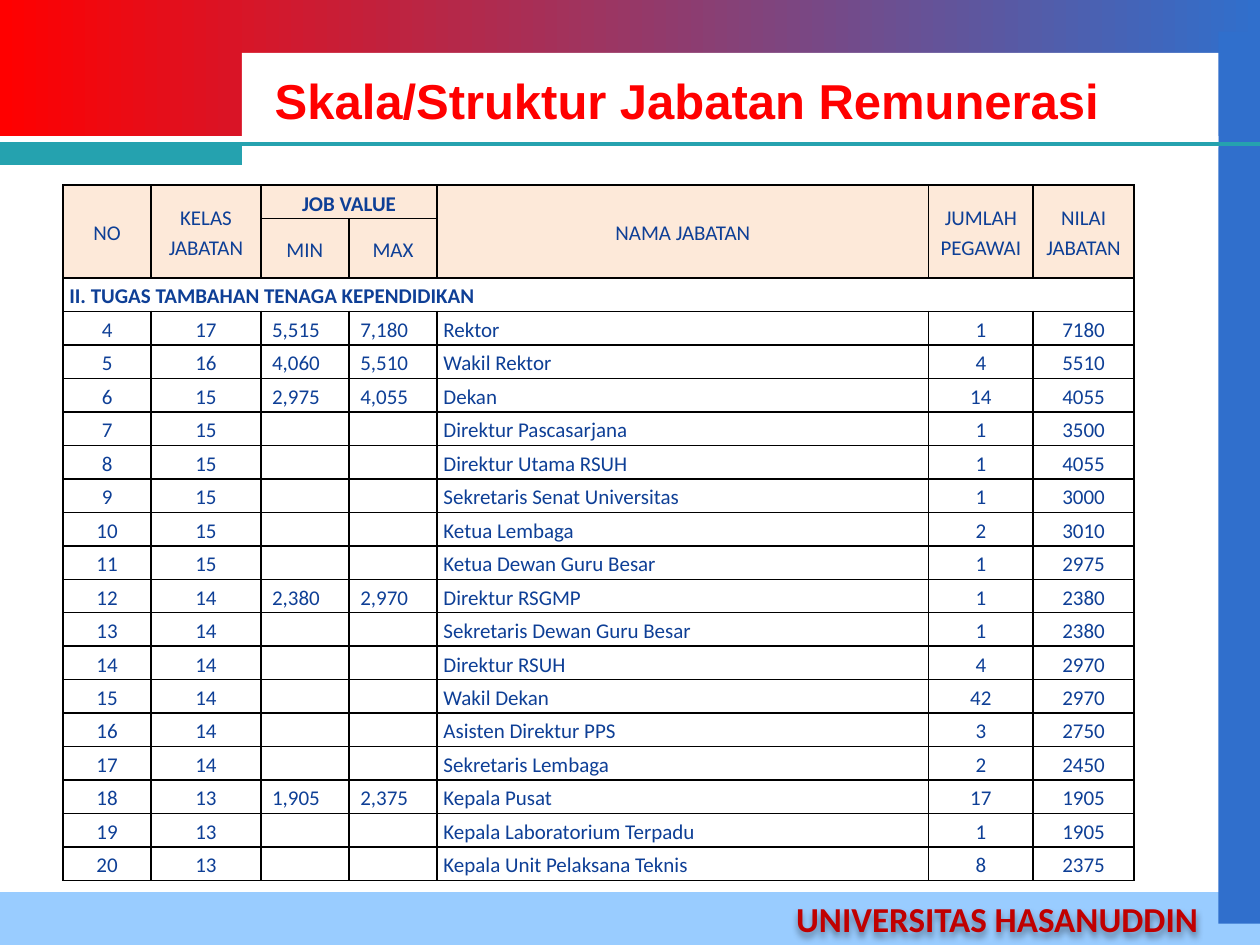
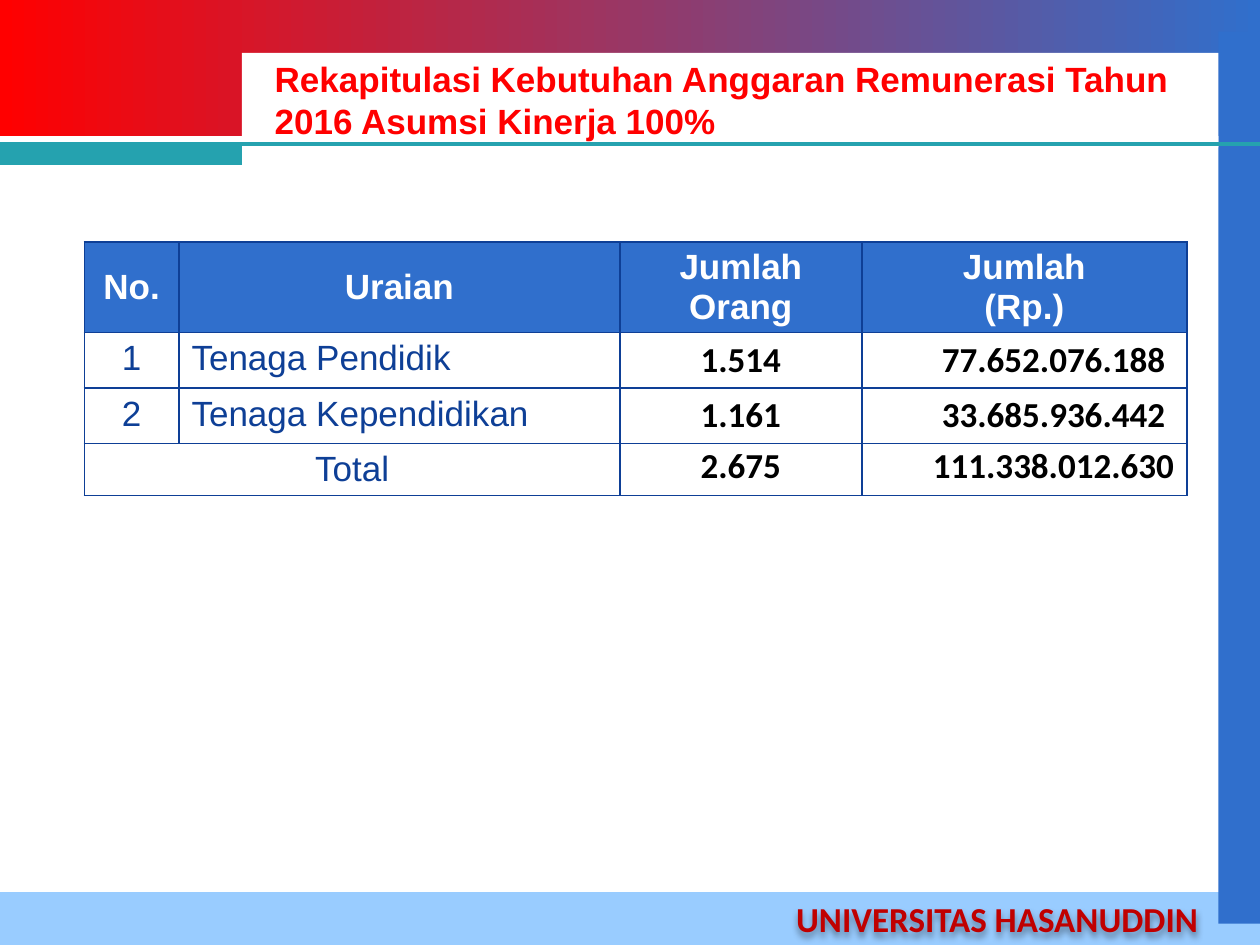
import pptx
import pptx.util
import pptx.dml.color
import pptx.enum.shapes
import pptx.enum.text
import pptx.oxml
import pptx.oxml.ns
import lxml.etree

Inches = pptx.util.Inches
Pt = pptx.util.Pt
ALIGN = pptx.enum.text.PP_ALIGN
ANCHOR = pptx.enum.text.MSO_ANCHOR
SIZING = pptx.enum.text.MSO_AUTO_SIZE
qn = pptx.oxml.ns.qn
NS = pptx.oxml.ns.nsdecls("a")

COLORS = {
    "red": "FF0000", "blue": "306FCC", "sky": "99CCFF", "teal": "25A2AF",
    "white": "FFFFFF", "black": "000000", "navy": "0E3F96",
    "brick": "C00000", "peach": "FDE9D9",
}
SHADOW = (f'<a:effectLst {NS}><a:outerShdw blurRad="50800" dist="38100" dir="5400000">'
          '<a:srgbClr val="000000"><a:alpha val="40000"/></a:srgbClr>'
          '</a:outerShdw></a:effectLst>')

# no, class, min, max, position, staff, value
JOBS = [
    ("4", "17", "5,515", "7,180", "Rektor", "1", "7180"),
    ("5", "16", "4,060", "5,510", "Wakil Rektor", "4", "5510"),
    ("6", "15", "2,975", "4,055", "Dekan", "14", "4055"),
    ("7", "15", "", "", "Direktur Pascasarjana", "1", "3500"),
    ("8", "15", "", "", "Direktur Utama RSUH", "1", "4055"),
    ("9", "15", "", "", "Sekretaris Senat Universitas", "1", "3000"),
    ("10", "15", "", "", "Ketua Lembaga", "2", "3010"),
    ("11", "15", "", "", "Ketua Dewan Guru Besar", "1", "2975"),
    ("12", "14", "2,380", "2,970", "Direktur RSGMP", "1", "2380"),
    ("13", "14", "", "", "Sekretaris Dewan Guru Besar", "1", "2380"),
    ("14", "14", "", "", "Direktur RSUH", "4", "2970"),
    ("15", "14", "", "", "Wakil Dekan", "42", "2970"),
    ("16", "14", "", "", "Asisten Direktur PPS", "3", "2750"),
    ("17", "14", "", "", "Sekretaris Lembaga", "2", "2450"),
    ("18", "13", "1,905", "2,375", "Kepala Pusat", "17", "1905"),
    ("19", "13", "", "", "Kepala Laboratorium Terpadu", "1", "1905"),
    ("20", "13", "", "", "Kepala Unit Pelaksana Teknis", "8", "2375"),
]
STAFF = [
    ("1", "Tenaga Pendidik", "1.514", "77.652.076.188"),
    ("2", "Tenaga Kependidikan", "1.161", "33.685.936.442"),
]


def rgb(name):
    return pptx.dml.color.RGBColor.from_string(COLORS[name])


class Deck:
    def __init__(self):
        self.prs = pptx.Presentation()
        self.prs.slide_width = Inches(10)
        self.prs.slide_height = Inches(7.5)
        self.layout = self.prs.slide_layouts[5]
        self.slide = None

    def start(self, title, size):
        """Add a slide with its title."""
        self.slide = self.prs.slides.add_slide(self.layout)
        shape = self.slide.shapes.title
        shape.left, shape.top = Inches(2.08), Inches(0.5)
        shape.width, shape.height = Inches(7.5), Inches(0.58)
        frame = shape.text_frame
        frame.text = title
        frame.word_wrap = True
        frame.auto_size = SIZING.NONE
        frame.vertical_anchor = ANCHOR.MIDDLE
        self.format(frame, size, "Arial", "red", True, ALIGN.LEFT)

    def format(self, frame, size, font, color, bold, align, spacing=1.0):
        for para in frame.paragraphs:
            para.alignment = align
            para.line_spacing = spacing
            for run in para.runs:
                run.font.size = Pt(size)
                run.font.name = font
                run.font.bold = bold
                run.font.color.rgb = rgb(color)
            if not para.runs:
                end = lxml.etree.SubElement(para._p, qn("a:endParaRPr"))
                end.set("sz", str(size * 100))

    def rect(self, left, top, width, height, color, fade=None):
        """Draw a band, fading to a second colour if one is given."""
        shape = self.slide.shapes.add_shape(
            pptx.enum.shapes.MSO_SHAPE.RECTANGLE,
            Inches(left), Inches(top), Inches(width), Inches(height))
        shape.shadow.inherit = False
        shape.line.fill.background()
        if fade:
            shape.fill.gradient()
            shape.fill.gradient_angle = 0
            for stop, name in zip(shape.fill.gradient_stops, (color, fade)):
                stop.color.rgb = rgb(name)
        else:
            shape.fill.solid()
            shape.fill.fore_color.rgb = rgb(color)

    def rule(self, top, color, width):
        """Draw a line across the whole slide."""
        line = self.slide.shapes.add_connector(
            pptx.enum.shapes.MSO_CONNECTOR.STRAIGHT,
            0, Inches(top), Inches(10), Inches(top))
        line.line.color.rgb = rgb(color)
        line.line.width = Pt(width)
        lxml.etree.SubElement(line._element.spPr, qn("a:effectLst"))

    def footer(self, text):
        box = self.slide.shapes.add_textbox(
            Inches(6.22), Inches(7.07), Inches(3.42), Inches(0.44))
        box.text_frame.text = text
        box.text_frame.word_wrap = False
        box.text_frame.auto_size = SIZING.SHAPE_TO_FIT_TEXT
        self.format(box.text_frame, 20, "Calibri", "brick", True, ALIGN.LEFT)
        box._element.spPr.append(pptx.oxml.parse_xml(SHADOW))

    def frame(self):
        """Draw the shared bands and move them to the layout."""
        for holder in list(self.layout.placeholders)[1:]:
            holder._element.getparent().remove(holder._element)
        self.rect(0, 0, 10, 1.08, "red", "blue")
        self.rect(0, 7.08, 10, 0.42, "sky")
        self.rect(9.67, 0.25, 0.33, 7.08, "blue")
        self.rect(1.92, 0.42, 7.75, 0.75, "white")
        self.rule(1.14, "teal", 2.25)
        self.rect(0, 1.14, 1.92, 0.17, "teal")
        self.footer("UNIVERSITAS HASANUDDIN")
        bands = [s for s in self.slide.shapes if not s.is_placeholder]
        for index, band in enumerate(bands):
            self.layout.shapes._spTree.insert(2 + index, band._element)

    def table(self, left, top, cols, rows, border):
        shape = self.slide.shapes.add_table(
            len(rows), len(cols), Inches(left), Inches(top),
            Inches(sum(cols)), Inches(sum(rows)))
        table = shape.table
        table.first_row = table.horz_banding = False
        for col, width in zip(table.columns, cols):
            col.width = Inches(width)
        for row, height in zip(table.rows, rows):
            row.height = Inches(height)
        for cell in table.iter_cells():
            props = cell._tc.get_or_add_tcPr()
            for side in ("lnL", "lnR", "lnT", "lnB"):
                props.append(pptx.oxml.parse_xml(
                    f'<a:{side} {NS} w="12700"><a:solidFill>'
                    f'<a:srgbClr val="{COLORS[border]}"/></a:solidFill></a:{side}>'))
            cell.fill.background()
        return table

    def cell(self, cell, text, size, font, color, bold=False, align=ALIGN.CENTER,
             fill="white", anchor=ANCHOR.MIDDLE, pad=None, spacing=1.0):
        """Fill a cell; pad is left, top, right, bottom in inches."""
        cell.text_frame.text = text
        cell.vertical_anchor = anchor
        if pad:
            (cell.margin_left, cell.margin_top,
             cell.margin_right, cell.margin_bottom) = map(Inches, pad)
        cell.fill.solid()
        cell.fill.fore_color.rgb = rgb(fill)
        self.format(cell.text_frame, size, font, color, bold, align, spacing)


def scale(deck):
    """Fill the slide with the job scale."""
    deck.start("Skala/Struktur Jabatan Remunerasi", 28)
    deck.frame()
    step = 5.05 / 19
    table = deck.table(0.5, 1.47, [0.7, 0.87, 0.7, 0.7, 3.9, 0.83, 0.8],
                       [step, 0.47] + [step] * 18, "black")

    def put(row, col, text, indent=0.05, **style):
        deck.cell(table.cell(row, col), text, 12, "Calibri", "navy",
                  pad=(indent, 0, 0.05, 0), spacing=1.15, **style)

    heads = {0: "NO", 1: "KELAS JABATAN", 4: "NAMA JABATAN",
             5: "JUMLAH PEGAWAI", 6: "NILAI JABATAN"}
    for col, text in heads.items():
        table.cell(0, col).merge(table.cell(1, col))
        put(0, col, text, fill="peach")
    table.cell(0, 2).merge(table.cell(0, 3))
    put(0, 2, "JOB VALUE", bold=True, fill="peach")
    put(1, 2, "MIN", fill="peach")
    put(1, 3, "MAX", fill="peach")
    table.cell(2, 0).merge(table.cell(2, 6))
    put(2, 0, "II. TUGAS TAMBAHAN TENAGA KEPENDIDIKAN", bold=True, align=ALIGN.LEFT)
    for row, job in enumerate(JOBS, 3):
        for col, text in enumerate(job):
            put(row, col, text, indent=0.09 if col in (2, 3) else 0.05,
                align=ALIGN.LEFT if col in (2, 3, 4) else ALIGN.CENTER)


def recap(deck):
    """Fill the slide with the budget summary."""
    deck.start("Rekapitulasi Kebutuhan Anggaran Remunerasi Tahun 2016 "
               "Asumsi Kinerja 100%", 20)
    table = deck.table(0.67, 1.92, [0.75, 3.5, 1.92, 2.58],
                       [0.72, 0.44, 0.44, 0.41], "navy")
    for col, text in enumerate(("No.", "Uraian", "Jumlah\nOrang", "Jumlah\n(Rp.)")):
        deck.cell(table.cell(0, col), text, 20, "Arial", "white", True, fill="blue")
    label = dict(size=20, font="Arial", color="navy", anchor=ANCHOR.TOP)
    figure = dict(size=20, font="Calibri", color="black", bold=True, anchor=ANCHOR.TOP)
    for row, (no, name, count, cost) in enumerate(STAFF, 1):
        deck.cell(table.cell(row, 0), no, **label)
        deck.cell(table.cell(row, 1), name, align=ALIGN.LEFT, **label)
        deck.cell(table.cell(row, 2), count, **figure)
        deck.cell(table.cell(row, 3), cost, align=ALIGN.RIGHT,
                  pad=(0.1, 0.05, 0.17, 0.05), **figure)
    table.cell(3, 0).merge(table.cell(3, 1))
    deck.cell(table.cell(3, 0), "Total", **label)
    deck.cell(table.cell(3, 2), "2.675", pad=(0.01, 0.01, 0.01, 0), **figure)
    deck.cell(table.cell(3, 3), "111.338.012.630", align=ALIGN.RIGHT,
              pad=(0.01, 0.01, 0.1, 0), **figure)


def main():
    deck = Deck()
    scale(deck)
    recap(deck)
    deck.prs.save("out.pptx")


if __name__ == "__main__":
    main()
